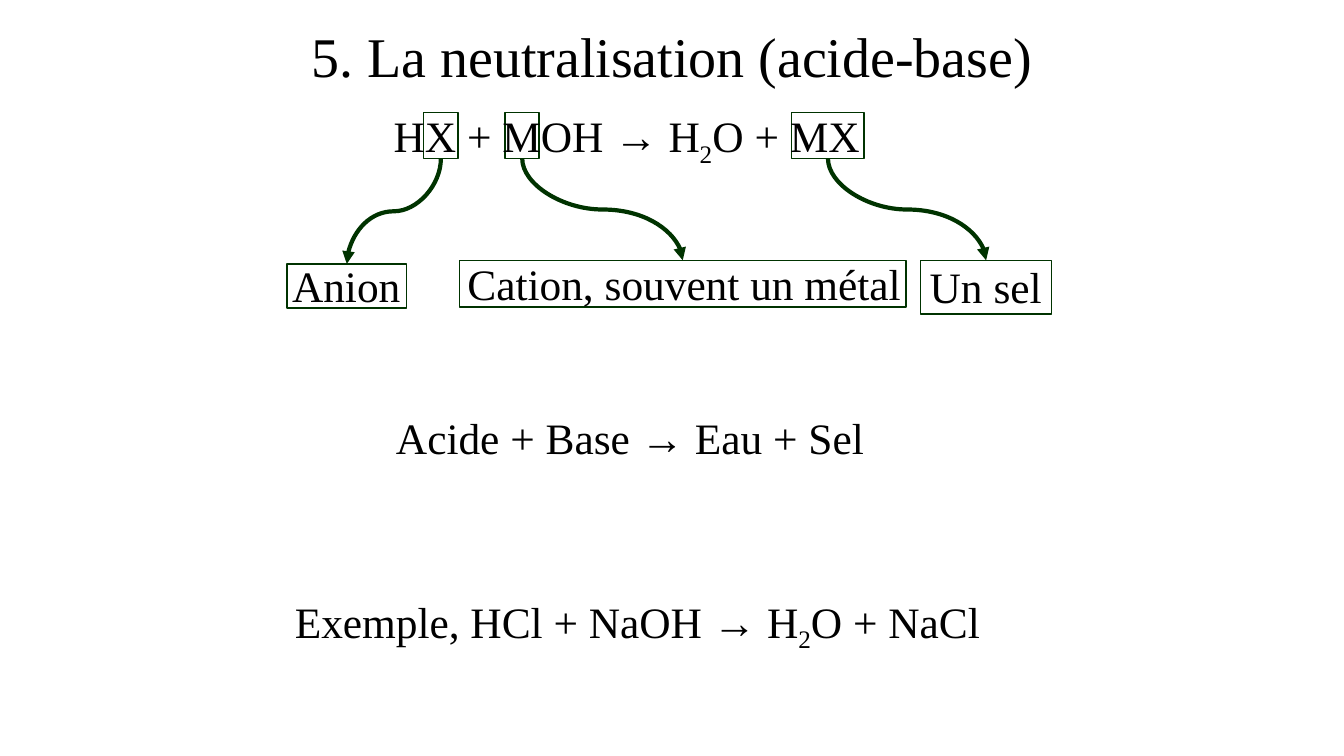
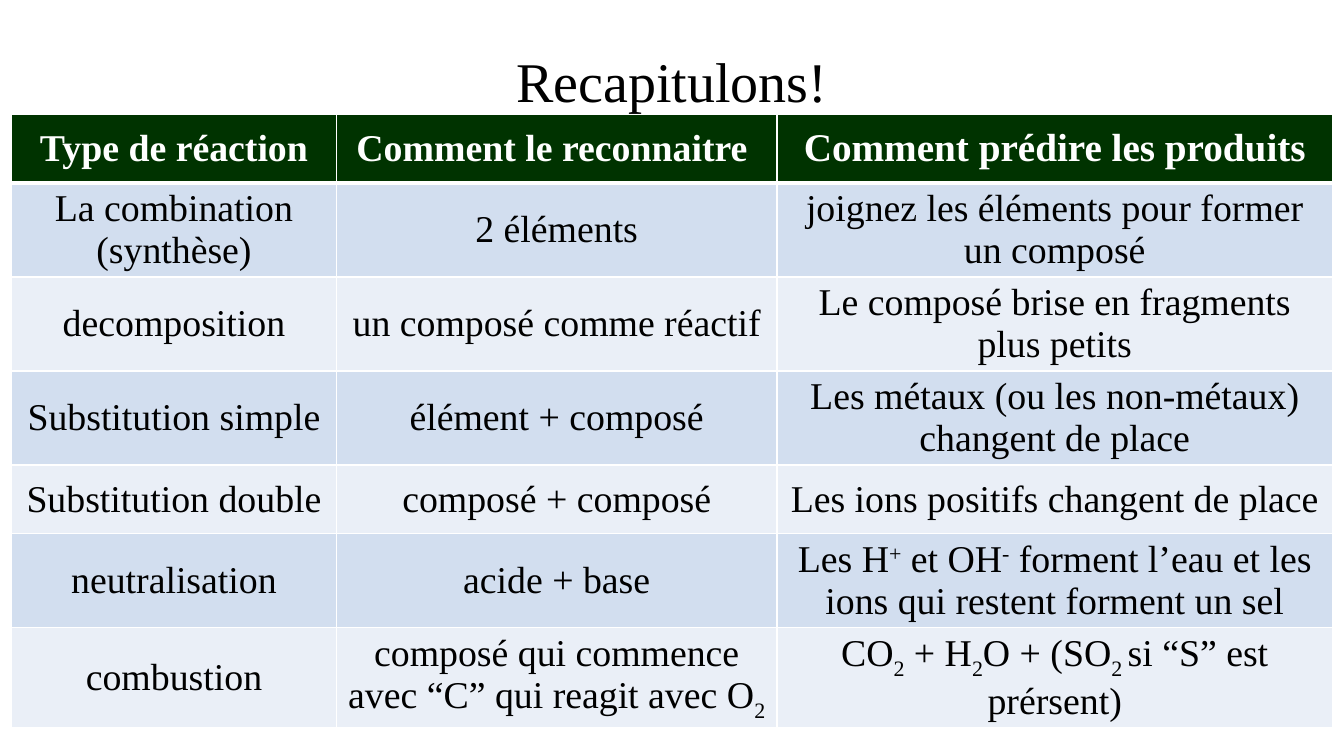
from lxml import etree
from pptx import Presentation
from pptx import util as u
from pptx.dml.color import RGBColor
from pptx.enum import shapes, text
from pptx.oxml.ns import qn

FONT = "Times New Roman"
GREEN, BLACK, WHITE = "003300", "000000", "FFFFFF"
BANDS = ("D2DEEF", "EAEFF7")
TITLE_SIZE, BODY_SIZE, CELL_SIZE = 40, 31, 27
SUB, SUP = -25000, 30000

# Rich text is a list of plain strings and (text, baseline) pairs.
# Equations: left, top, width, rich text
EQUATIONS = [
    (9.67, 2.62, 12.45, ["HX + MOH → H", ("2", SUB), "O + MX"]),
    (9.73, 10.24, 12.42, ["Acide + Base → Eau + Sel"]),
    (7.18, 14.86, 18.01, ["Exemple, HCl + NaOH → H", ("2", SUB), "O + NaCl"]),
]
EQUATION_HEIGHT = 1.57

# Each marked part of the equation (left, width) and its label
# (text, left inset, box)
MARK_TOP, MARK_HEIGHT = 2.84, 1.16
CALLOUTS = [
    ((10.68, 0.86), "Anion", 0.13, (7.23, 6.65, 3.02, 1.11)),
    ((12.73, 0.86), "Cation, souvent un métal", 0.2, (11.58, 6.56, 11.25, 1.18)),
    ((19.95, 1.83), "Un sel", 0.23, (23.2, 6.56, 3.3, 1.35)),
]

COLUMN_WIDTHS = (8.19, 11.1, 14)
HEADER_SIZES = (27, 27, 28)
ROW_HEIGHT, CELL_MARGIN = 1.73, 0.04
REACTIONS = [
    (["Type de réaction"], ["Comment le reconnaitre "],
     ["Comment prédire les produits"]),
    (["La combination (synthèse)"], ["2 éléments"],
     ["joignez les éléments pour former un composé"]),
    (["decomposition"], ["un composé comme réactif"],
     ["Le composé brise en fragments plus petits"]),
    (["Substitution simple"], ["élément + composé"],
     ["Les métaux (ou les non-métaux) changent de place"]),
    (["Substitution double"], ["composé + composé"],
     ["Les ions positifs changent de place"]),
    (["neutralisation"], ["acide + base"],
     ["Les H", ("+", SUP), " et OH", ("-", SUP),
      " forment l’eau et les ions qui restent forment un sel"]),
    (["combustion"],
     ["composé qui commence avec “C” qui reagit avec O", ("2 ", SUB)],
     ["CO", ("2", SUB), " + H", ("2", SUB), "O + (SO", ("2 ", SUB),
      "si “S” est prérsent)"]),
]


def color(value):
    return RGBColor.from_string(value)


def cm(*lengths):
    return [u.Cm(length) for length in lengths]


def write(frame, parts, size, ink=BLACK, bold=False, align=None):
    para = frame.paragraphs[0]
    para.alignment = align
    for part in parts:
        words, baseline = (part, 0) if isinstance(part, str) else part
        span = para.add_run()
        span.text = words
        span.font.name, span.font.size, span.font.bold = FONT, u.Pt(size), bold
        span.font.color.rgb = color(ink)
        if baseline:
            span.font._element.set("baseline", str(baseline))
    return para


def add_title(page, words, top):
    box = page.shapes.add_textbox(*cm(2.33, top, 29.21, 2.26))
    frame = box.text_frame
    frame.word_wrap = True
    frame.vertical_anchor = text.MSO_ANCHOR.MIDDLE
    para = write(frame, [words], TITLE_SIZE, align=text.PP_ALIGN.CENTER)
    para.line_spacing = 0.9


def add_equation(page, left, top, width, parts):
    box = page.shapes.add_textbox(*cm(left, top, width, EQUATION_HEIGHT))
    box.text_frame.word_wrap = False
    box.text_frame.auto_size = text.MSO_AUTO_SIZE.SHAPE_TO_FIT_TEXT
    write(box.text_frame, parts, BODY_SIZE)


def add_frame(page, left, top, width, height):
    box = page.shapes.add_shape(shapes.MSO_SHAPE.RECTANGLE,
                                *cm(left, top, width, height))
    box.shadow.inherit = False
    box.fill.solid()
    box.fill.fore_color.rgb = color(WHITE)
    box.line.color.rgb = color(GREEN)
    box.line.width = u.Pt(1)
    return box


def add_label(page, words, inset, place):
    box = add_frame(page, *place)
    frame = box.text_frame
    frame.word_wrap = True
    frame.vertical_anchor = text.MSO_ANCHOR.MIDDLE
    frame.margin_left, frame.margin_right = cm(inset, 0)
    frame.margin_top, frame.margin_bottom = cm(0, 0.04)
    write(frame, [words], BODY_SIZE, align=text.PP_ALIGN.LEFT)
    return box


def add_curved_arrow(page, mark, label):
    """Join the mark's bottom to the label's top with a vertical S-curve."""
    arrow = page.shapes.add_connector(shapes.MSO_CONNECTOR.CURVE, 0, 0, 0, 0)
    arrow.begin_connect(mark, 2)
    arrow.end_connect(label, 0)
    x1, y1 = mark.left + mark.width // 2, mark.top + mark.height
    x2, y2 = label.left + label.width // 2, label.top
    # The curve is stored lying down, then turned about its centre.
    length, breadth = y2 - y1, abs(x2 - x1)
    arrow.left, arrow.top = (x1 + x2 - length) // 2, (y1 + y2 - breadth) // 2
    arrow.width, arrow.height = length, breadth
    properties = arrow._element.spPr
    transform = properties.find(qn("a:xfrm"))
    for name in ("flipH", "flipV"):
        transform.attrib.pop(name, None)
    if x2 < x1:
        transform.set("rot", "5400000")
    else:
        transform.set("rot", "16200000")
        transform.set("flipH", "1")
    arrow.line.color.rgb = color(GREEN)
    arrow.line.width = u.Pt(3)
    etree.SubElement(properties.find(qn("a:ln")), qn("a:tailEnd"), type="triangle")
    etree.SubElement(properties, qn("a:effectLst"))


def set_borders(cell, widths):
    """Draw white borders; widths maps L, R, T and B to points."""
    properties = cell._tc.get_or_add_tcPr()
    for side, width in widths.items():
        line = etree.SubElement(properties, qn("a:ln" + side), w=str(u.Pt(width)))
        fill = etree.SubElement(line, qn("a:solidFill"))
        etree.SubElement(fill, qn("a:srgbClr"), val=WHITE)


def add_reaction_table(page):
    count = len(REACTIONS)
    place = cm(0.29, 2.88, sum(COLUMN_WIDTHS), ROW_HEIGHT * count)
    table = page.shapes.add_table(count, len(COLUMN_WIDTHS), *place).table
    table.horz_banding = False
    for column, width in zip(table.columns, COLUMN_WIDTHS):
        column.width = u.Cm(width)
    for r, entries in enumerate(REACTIONS):
        table.rows[r].height = u.Cm(ROW_HEIGHT)
        header = r == 0
        for c, parts in enumerate(entries):
            cell = table.cell(r, c)
            set_borders(cell, {"L": 1, "R": 1, "T": 3 if r == 1 else 1,
                               "B": 3 if header else 1})
            cell.fill.solid()
            cell.fill.fore_color.rgb = color(GREEN if header else BANDS[(r - 1) % 2])
            cell.vertical_anchor = text.MSO_ANCHOR.MIDDLE
            cell.margin_top = cell.margin_bottom = u.Cm(CELL_MARGIN)
            write(cell.text_frame, parts, HEADER_SIZES[c] if header else CELL_SIZE,
                  WHITE if header else BLACK, header, text.PP_ALIGN.CENTER)


def add_neutralisation_page(page):
    add_title(page, "5. La neutralisation (acide-base)", 0.36)
    for (left, width), words, inset, place in CALLOUTS:
        mark = add_frame(page, left, MARK_TOP, width, MARK_HEIGHT)
        add_curved_arrow(page, mark, add_label(page, words, inset, place))
    for equation in EQUATIONS:
        add_equation(page, *equation)


def add_summary_page(page):
    add_title(page, "Recapitulons!", 1)
    add_reaction_table(page)


def main():
    deck = Presentation()
    deck.slide_width, deck.slide_height = cm(33.87, 19.05)
    blank = deck.slide_layouts[6]
    for build in (add_neutralisation_page, add_summary_page):
        build(deck.slides.add_slide(blank))
    deck.save("out.pptx")


if __name__ == "__main__":
    main()
